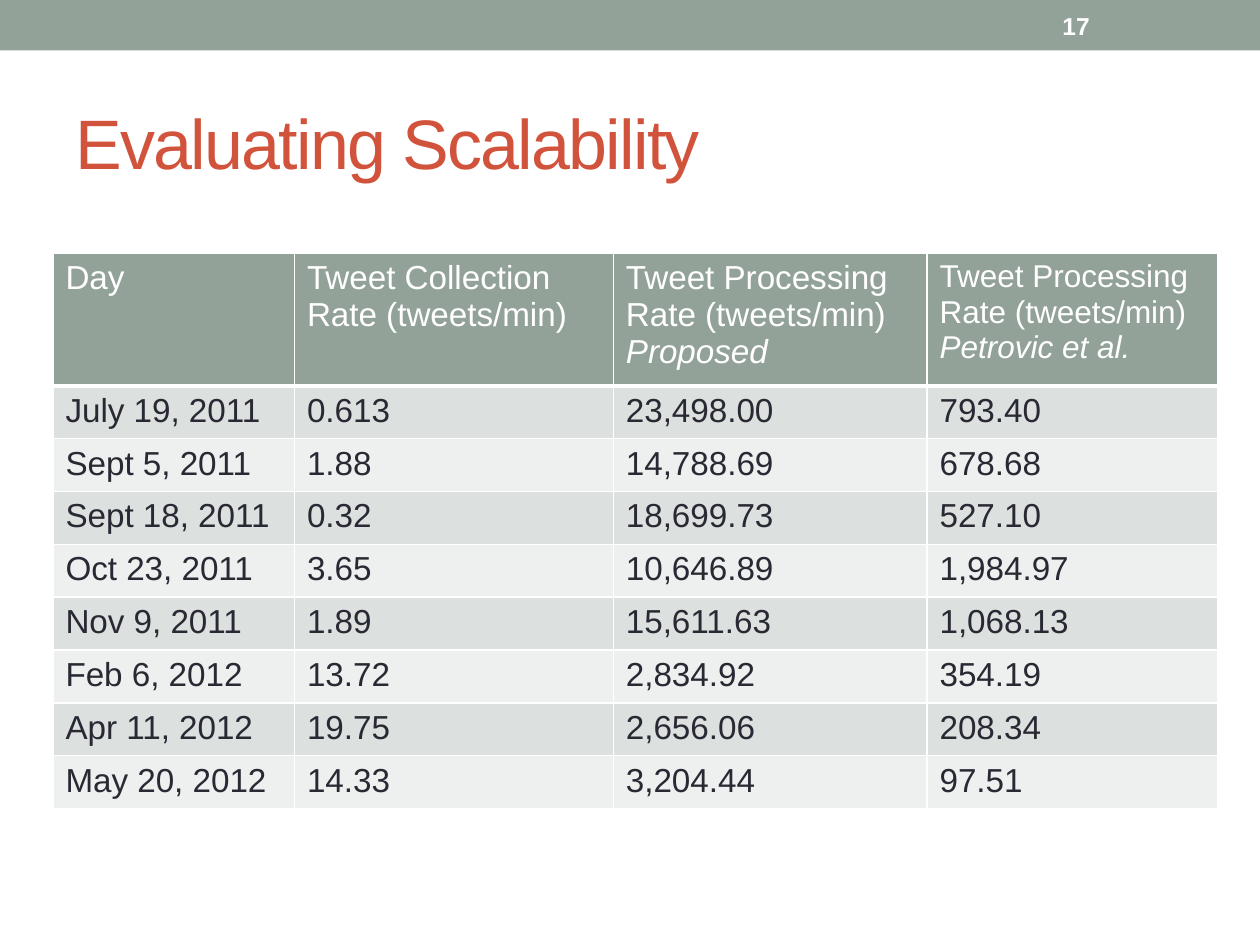
from lxml.etree import SubElement as Sub
from pptx import Presentation
from pptx.dml.color import RGBColor as RGB
from pptx.enum.shapes import MSO_SHAPE as Form
from pptx.enum.text import MSO_ANCHOR as Anchor
from pptx.oxml.ns import qn
from pptx.util import Pt

# Content
TITLE = "Evaluating Scalability"
PAGE = "17"
HEAD = [
    ["Day"],
    ["Tweet Collection Rate (tweets/min)"],
    ["Tweet Processing Rate (tweets/min)", "Proposed"],
    ["Tweet Processing Rate (tweets/min)", "Petrovic et al."],
]
ROWS = [
    ("July 19, 2011", "0.613", "23,498.00", "793.40"),
    ("Sept 5, 2011", "1.88", "14,788.69", "678.68"),
    ("Sept 18, 2011", "0.32", "18,699.73", "527.10"),
    ("Oct 23, 2011", "3.65", "10,646.89", "1,984.97"),
    ("Nov 9, 2011", "1.89", "15,611.63", "1,068.13"),
    ("Feb 6, 2012", "13.72", "2,834.92", "354.19"),
    ("Apr 11, 2012", "19.75", "2,656.06", "208.34"),
    ("May 20, 2012", "14.33", "3,204.44", "97.51"),
]


class Theme:
    font = "Arial"
    sage, red, ink, white = "93A299", "D2533C", "292934", "FFFFFF"
    bands = ("DCE0DE", "EEF0EF")
    title, page, cell, last = 40, 14, 19, 18


# Layout in points
WIDE, HIGH = 720, 540
COLS = (138, 182.25, 179.25, 166.25)
HEAD_H, ROW_H = 76, 30.2
LEFT, TOP = 30.25, 144.5


def style(para, size, color, bold=False, italic=False):
    font = para.font
    font.name, font.size = Theme.font, Pt(size)
    font.bold, font.italic = bold, italic
    font.color.rgb = RGB.from_string(color)


def paint(part, color):
    part.fill.solid()
    part.fill.fore_color.rgb = RGB.from_string(color)


def label(slide, text, box, size, color, bold=False):
    frame = slide.shapes.add_textbox(*map(Pt, box)).text_frame
    frame.word_wrap = True
    frame.vertical_anchor = Anchor.MIDDLE
    para = frame.paragraphs[0]
    para.text = text
    style(para, size, color, bold)
    return para


def edge(cell, base):
    """Draw white borders; they must come before the fill in the XML."""
    props = cell._tc.get_or_add_tcPr()
    for side, width in (("L", 1), ("R", 1), ("T", 1), ("B", base)):
        line = Sub(props, qn("a:ln" + side), w=str(Pt(width)))
        fill = Sub(line, qn("a:solidFill"))
        Sub(fill, qn("a:srgbClr"), val=Theme.white)


def fill_cell(cell, lines, size, color, back, base=1):
    edge(cell, base)
    paint(cell, back)
    cell.text = "\n".join(lines)
    for i, para in enumerate(cell.text_frame.paragraphs):
        style(para, size, color, italic=i > 0)


def add_grid(slide):
    high = HEAD_H + ROW_H * len(ROWS)
    box = map(Pt, (LEFT, TOP, sum(COLS), high))
    grid = slide.shapes.add_table(len(ROWS) + 1, len(COLS), *box).table
    for col, width in zip(grid.columns, COLS):
        col.width = Pt(width)
    for r, row in enumerate(grid.rows):
        row.height = Pt(ROW_H if r else HEAD_H)
    # Header
    for c, lines in enumerate(HEAD):
        size = Theme.last if c == len(HEAD) - 1 else Theme.cell
        fill_cell(grid.cell(0, c), lines, size, Theme.white, Theme.sage, 3)
    # Banded body
    for r, row in enumerate(ROWS):
        for c, text in enumerate(row):
            fill_cell(grid.cell(r + 1, c), [text], Theme.cell, Theme.ink,
                      Theme.bands[r % 2])


def main():
    deck = Presentation()
    deck.slide_width, deck.slide_height = Pt(WIDE), Pt(HIGH)
    slide = deck.slides.add_slide(deck.slide_layouts[6])

    # Top bar
    bar = slide.shapes.add_shape(Form.RECTANGLE, 0, 0, Pt(WIDE), Pt(28.8))
    bar.shadow.inherit = False
    paint(bar, Theme.sage)
    bar.line.fill.background()

    # Title with tight letter spacing
    head = label(slide, TITLE, (36, 42, 648, 78), Theme.title, Theme.red)
    head.runs[0].font._element.set("spc", "-100")

    add_grid(slide)

    # Page number
    label(slide, PAGE, (600, 1.5, 84, 26), Theme.page, Theme.white, True)
    deck.save("out.pptx")


if __name__ == "__main__":
    main()
